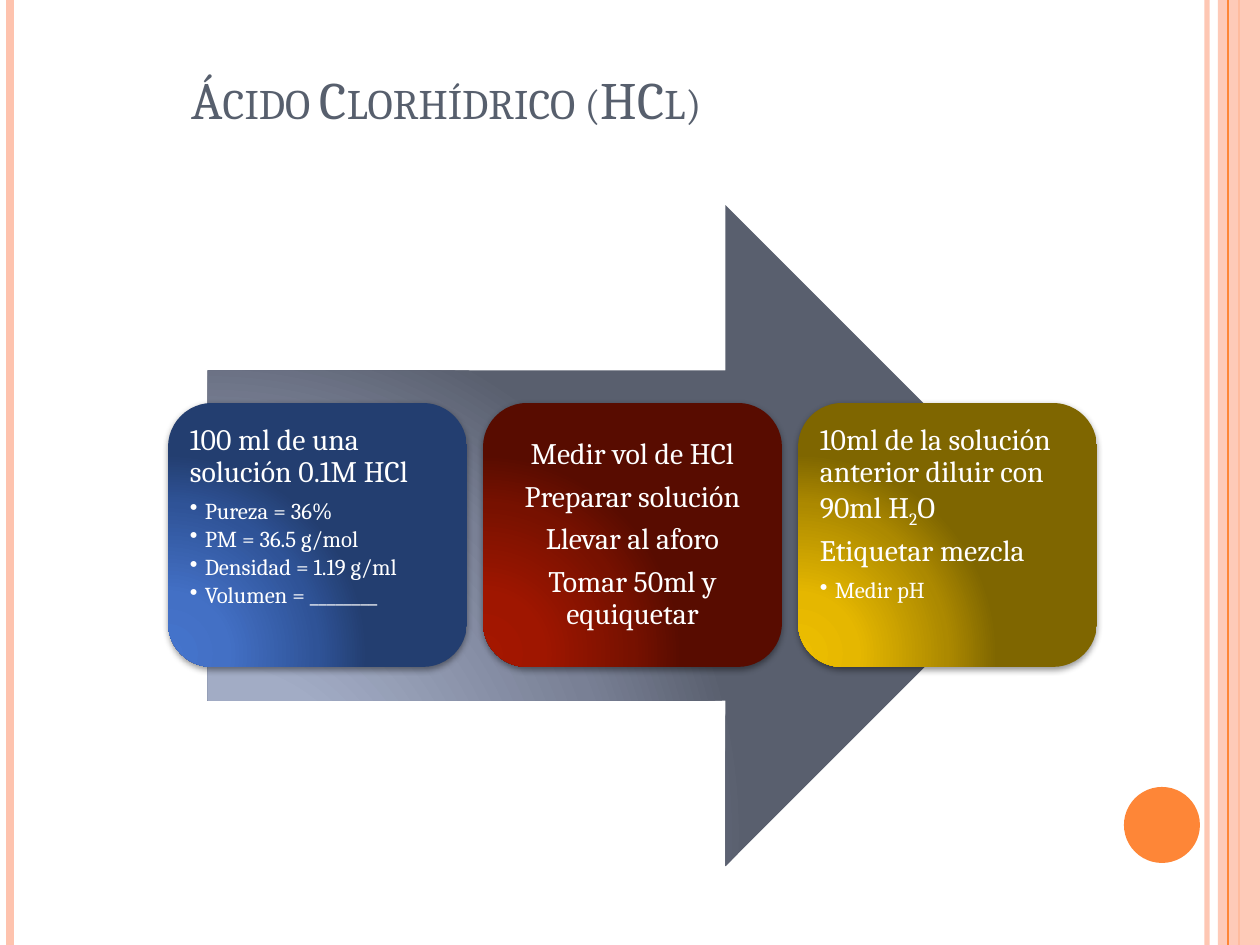
from dataclasses import dataclass

from pptx import Presentation
from pptx import util as u
from pptx.dml import color
from pptx.enum import shapes, text
from pptx.oxml import parse_xml
from pptx.oxml import ns

SLIDE_WIDTH, SLIDE_HEIGHT = 1260, 945
EMU_PER_PX = 9144000 / SLIDE_WIDTH
CARD_LEFT, CARD_TOP, CARD_WIDTH, CARD_HEIGHT, CARD_PITCH = 168, 403, 299, 264, 315
CARD_MARGIN, BULLET_INDENT = 9, 15


@dataclass(frozen=True)
class Theme:
    font: str = "Cambria"
    title: str = "575F6D"
    card_text: str = "FFFFFF"
    orange: str = "FE8637"
    peach: str = "FEC3AE"
    arrow: tuple[str, ...] = ("A8B2CC", "A2ACC5", "798095", "595F6E")
    blue: tuple[str, ...] = ("4574CC", "4370C5", "2F5397", "233E70")
    red: tuple[str, ...] = ("A41700", "9F1600", "771100", "580C00")
    gold: tuple[str, ...] = ("EDBE00", "E5B700", "AC8900", "7F6600")
    stops: tuple[int, ...] = (0, 30, 75, 100)
    title_size: int = 30
    step_size: int = 17
    detail_size: int = 13


THEME = Theme()


@dataclass(frozen=True)
class Stripe:
    x: int
    color: str
    weight: float
    opacity: int = 100


@dataclass(frozen=True)
class Step:
    """A line of card text; every second piece is a subscript."""
    pieces: tuple[str, ...]
    bullet: bool = False


@dataclass(frozen=True)
class Card:
    colors: tuple[str, ...]
    steps: tuple[Step, ...]
    centred: bool = False


BACK_STRIPES = (
    Stripe(1207, THEME.peach, 3, 93),
    Stripe(10, THEME.peach, 4.5),
    Stripe(1239, THEME.orange, 1.5),
)
FRONT_STRIPE = Stripe(1228, THEME.orange, 0.75)

CARDS = (
    Card(THEME.blue, (
        Step(("100 ml de una solución 0.1M HCl",)),
        Step(("Pureza = 36%",), True),
        Step(("PM = 36.5 g/mol",), True),
        Step(("Densidad = 1.19 g/ml",), True),
        Step(("Volumen = ________",), True),
    )),
    Card(THEME.red, (
        Step(("Medir vol de HCl",)),
        Step(("Preparar solución",)),
        Step(("Llevar al aforo",)),
        Step(("Tomar 50ml y equiquetar",)),
    ), centred=True),
    Card(THEME.gold, (
        Step(("10ml de la solución anterior diluir con 90ml H", "2", "O")),
        Step(("Etiquetar mezcla",)),
        Step(("Medir pH",), True),
    )),
)


def px(length: float) -> u.Emu:
    return u.Emu(round(length * EMU_PER_PX))


def rgb(value: str) -> color.RGBColor:
    return color.RGBColor.from_string(value)


def element(xml: str):
    """Parse one DrawingML element written without its namespace declaration."""
    tag, rest = xml[1:].split(" ", 1)
    return parse_xml(f"<{tag} {ns.nsdecls('a')} {rest}")


def set_opacity(fill_owner, percent: int) -> None:
    for tint in fill_owner.iter(ns.qn("a:srgbClr")):
        tint.append(element(f'<a:alpha val="{percent * 1000}"/>'))


def add_stripe(slide, stripe: Stripe) -> None:
    line = slide.shapes.add_connector(
        shapes.MSO_CONNECTOR.STRAIGHT, px(stripe.x), 0, px(stripe.x), px(SLIDE_HEIGHT))
    line.line.color.rgb = rgb(stripe.color)
    line.line.width = u.Pt(stripe.weight)
    properties = line._element.spPr
    if stripe.opacity < 100:
        set_opacity(properties, stripe.opacity)
    properties.append(element("<a:effectLst />"))


def add_plain_shape(slide, kind, left: int, top: int, width: int, height: int, fill: str):
    shape = slide.shapes.add_shape(kind, px(left), px(top), px(width), px(height))
    shape.shadow.inherit = False
    shape.fill.solid()
    shape.fill.fore_color.rgb = rgb(fill)
    shape.line.fill.background()
    return shape


def add_glowing_shape(slide, kind, left: int, top: int, width: int, height: int,
                      colors: tuple[str, ...]):
    """Add a shape with a circular gradient that starts at its lower left corner."""
    shape = add_plain_shape(slide, kind, left, top, width, height, colors[-1])
    stops = "".join(f'<a:gs pos="{stop * 1000}"><a:srgbClr val="{tint}"/></a:gs>'
                    for stop, tint in zip(THEME.stops, colors))
    properties = shape._element.spPr
    properties.replace(properties.find(ns.qn("a:solidFill")), element(
        f'<a:gradFill rotWithShape="1"><a:gsLst>{stops}</a:gsLst><a:path path="circle">'
        '<a:fillToRect l="5000" t="100000" r="120000" b="10000"/></a:path></a:gradFill>'))
    return shape


def add_step(paragraph, step: Step, centred: bool) -> None:
    paragraph.alignment = text.PP_ALIGN.CENTER if centred else text.PP_ALIGN.LEFT
    paragraph.line_spacing = 0.9
    paragraph.space_after = u.Pt(2 if step.bullet else 6)
    paragraph.font.name = THEME.font
    paragraph.font.size = u.Pt(THEME.detail_size if step.bullet else THEME.step_size)
    paragraph.font.color.rgb = rgb(THEME.card_text)
    for index, piece in enumerate(step.pieces):
        run = paragraph.add_run()
        run.text = piece
        if index % 2:
            run.font._element.set("baseline", "-25000")
    if step.bullet:
        paragraph.level = 1
        properties = paragraph._p.get_or_add_pPr()
        properties.set("marL", str(px(BULLET_INDENT)))
        properties.set("indent", str(-px(BULLET_INDENT)))
        properties.find(ns.qn("a:defRPr")).addprevious(element('<a:buChar char="•"/>'))


def add_card(slide, card: Card, left: int) -> None:
    shape = add_glowing_shape(slide, shapes.MSO_SHAPE.ROUNDED_RECTANGLE,
                              left, CARD_TOP, CARD_WIDTH, CARD_HEIGHT, card.colors)
    shape._element.spPr.find(ns.qn("a:effectLst")).append(element(
        f'<a:outerShdw blurRad="{u.Pt(4)}" dist="{u.Pt(1.6)}" dir="5400000" rotWithShape="0">'
        '<a:srgbClr val="000000"><a:alpha val="42000"/></a:srgbClr></a:outerShdw>'))
    frame = shape.text_frame
    frame.word_wrap = True
    frame.margin_left = frame.margin_right = px(CARD_MARGIN)
    frame.margin_top = frame.margin_bottom = px(CARD_MARGIN)
    frame.vertical_anchor = text.MSO_ANCHOR.MIDDLE if card.centred else text.MSO_ANCHOR.TOP
    for index, step in enumerate(card.steps):
        add_step(frame.add_paragraph() if index else frame.paragraphs[0], step, card.centred)


def add_title(slide, wording: str) -> None:
    frame = slide.shapes.add_textbox(px(179), px(-21), px(1071), px(157)).text_frame
    frame.word_wrap = True
    frame.vertical_anchor = text.MSO_ANCHOR.BOTTOM
    paragraph = frame.paragraphs[0]
    run = paragraph.add_run()
    run.text = wording
    paragraph.font.name = THEME.font
    paragraph.font.size = u.Pt(THEME.title_size)
    paragraph.font.color.rgb = rgb(THEME.title)
    run.font._element.set("cap", "small")


def main() -> None:
    presentation = Presentation()
    presentation.slide_width, presentation.slide_height = px(SLIDE_WIDTH), px(SLIDE_HEIGHT)
    slide = presentation.slides.add_slide(presentation.slide_layouts[6])
    for stripe in BACK_STRIPES:
        add_stripe(slide, stripe)
    band = add_plain_shape(slide, shapes.MSO_SHAPE.RECTANGLE, 1218, 0, 42, SLIDE_HEIGHT, THEME.peach)
    set_opacity(band._element.spPr, 87)
    add_stripe(slide, FRONT_STRIPE)
    add_plain_shape(slide, shapes.MSO_SHAPE.OVAL, 1124, 787, 76, 76, THEME.orange)
    add_title(slide, "Ácido Clorhídrico (HCl)")
    add_glowing_shape(slide, shapes.MSO_SHAPE.RIGHT_ARROW, 208, 205, 848, 661, THEME.arrow)
    for index, card in enumerate(CARDS):
        add_card(slide, card, CARD_LEFT + index * CARD_PITCH)
    presentation.save("out.pptx")


if __name__ == "__main__":
    main()
